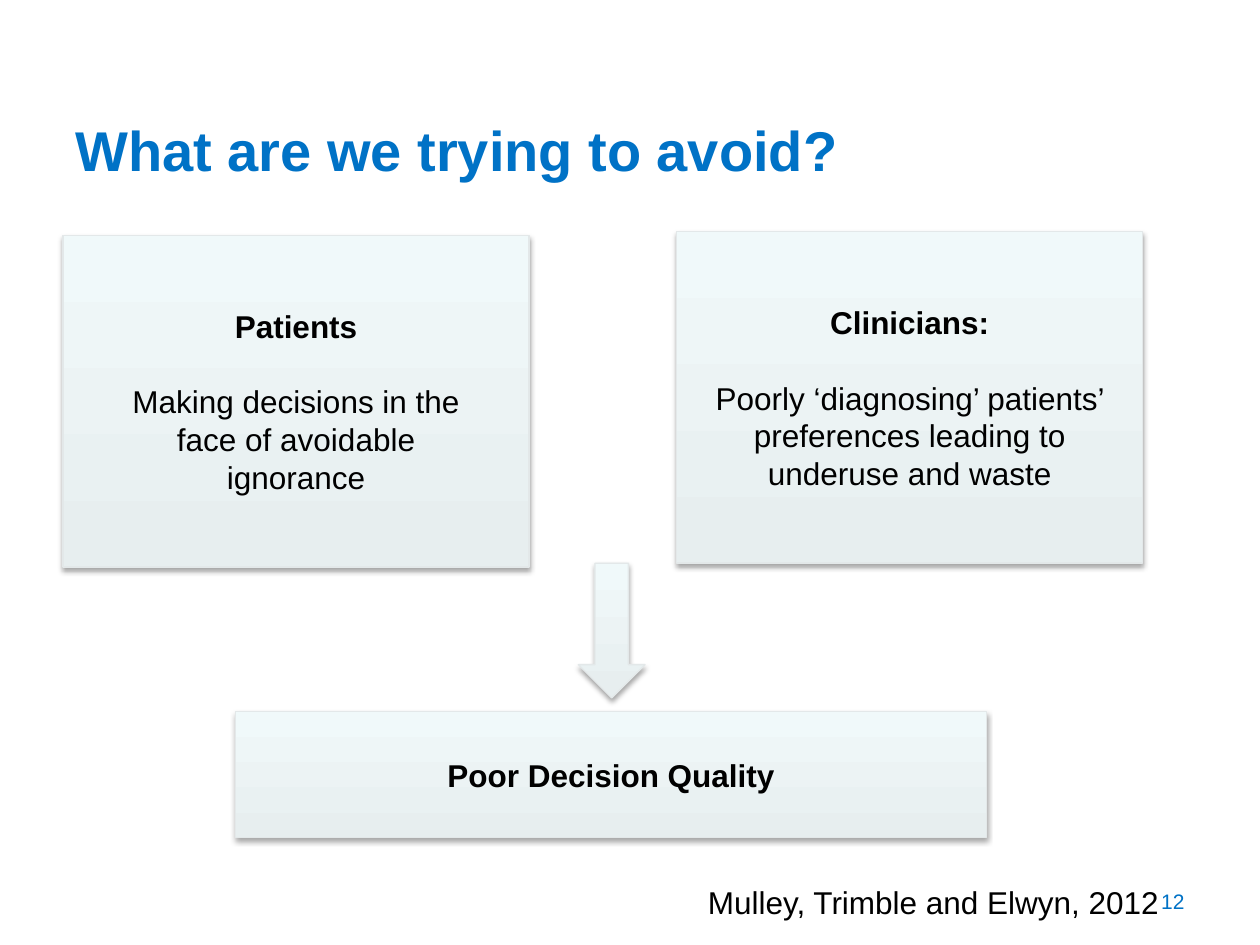
from dataclasses import dataclass

from lxml import etree
from pptx import Presentation
from pptx.dml.color import RGBColor
from pptx.enum import shapes, text
from pptx.oxml import ns
from pptx.util import Inches, Pt

BLUE = RGBColor(0x00, 0x72, 0xC6)
BLACK = RGBColor(0x00, 0x00, 0x00)
BORDER = RGBColor(0xE3, 0xE8, 0xE9)
GRADIENT = (RGBColor(0xE7, 0xEE, 0xEF), RGBColor(0xF0, 0xF9, 0xFA))
BODY_SIZE = 18
HEADING_GAP = Pt(21.6)

RECT = shapes.MSO_SHAPE.RECTANGLE
ARROW = shapes.MSO_SHAPE.DOWN_ARROW
ALIGN = text.PP_ALIGN
ANCHOR = text.MSO_ANCHOR


@dataclass(frozen=True)
class Panel:
    left: float
    top: float
    width: float
    height: float
    heading: str = ""
    lines: tuple[str, ...] = ()
    preset: shapes.MSO_SHAPE = RECT


@dataclass(frozen=True)
class Label:
    left: float
    top: float
    width: float
    height: float
    words: str
    font: dict
    align: text.PP_ALIGN = ALIGN.LEFT
    anchor: text.MSO_ANCHOR = ANCHOR.MIDDLE
    wrap: bool = True


PANELS = (
    Panel(0.5, 1.87, 3.7, 2.63, "Patients",
          ("Making decisions in the", "face of avoidable", "ignorance")),
    Panel(5.37, 1.84, 3.7, 2.63, "Clinicians:",
          ("Poorly ‘diagnosing’ patients’ preferences leading to underuse and waste",)),
    Panel(1.87, 5.65, 5.96, 1, "Poor Decision Quality"),
    Panel(4.59, 4.47, 0.53, 1.07, preset=ARROW),
)

LABELS = (
    Label(7.17, 6.95, 2.33, 0.4, "12", {"size": Pt(12)}, ALIGN.RIGHT),
    Label(0.5, 0.82, 8.05, 0.73, "What are we trying to avoid?",
          {"size": Pt(32), "bold": True}),
    Label(5.52, 6.96, 3.82, 0.4, "Mulley, Trimble and Elwyn, 2012",
          {"size": Pt(BODY_SIZE)}, anchor=ANCHOR.TOP, wrap=False),
)


def add_run(p, words: str, color: RGBColor, **font) -> None:
    r = p.add_run()
    r.text = words
    r.font.color.rgb = color
    for name, value in {"name": "Arial", **font}.items():
        setattr(r.font, name, value)


def add_soft_shadow(sp) -> None:
    """Give the shape a faint shadow that falls straight down."""
    sp.shadow.inherit = False
    effects = sp._element.spPr.find(ns.qn("a:effectLst"))
    shadow = etree.SubElement(
        effects, ns.qn("a:outerShdw"), blurRad=str(Pt(3.1)), dist=str(Pt(1.8)),
        dir="5400000", rotWithShape="0")
    color = etree.SubElement(shadow, ns.qn("a:srgbClr"), val="000000")
    etree.SubElement(color, ns.qn("a:alpha"), val="35000")


def draw_panel(s, panel: Panel) -> None:
    sp = s.shapes.add_shape(
        panel.preset, Inches(panel.left), Inches(panel.top),
        Inches(panel.width), Inches(panel.height))
    sp.fill.gradient()
    sp.fill.gradient_angle = 90
    for stop, color, position in zip(sp.fill.gradient_stops, GRADIENT, (0, 1)):
        stop.color.rgb = color
        stop.position = position
    sp.line.color.rgb = BORDER
    sp.line.width = Pt(0.75)
    add_soft_shadow(sp)
    if not panel.heading:
        return
    tf = sp.text_frame
    tf.word_wrap = True
    tf.vertical_anchor = ANCHOR.MIDDLE
    for i, words in enumerate((panel.heading, *panel.lines)):
        p = tf.add_paragraph() if i else tf.paragraphs[0]
        p.alignment = ALIGN.CENTER
        if i == 1:
            p.space_before = HEADING_GAP
        add_run(p, words, BLACK, size=Pt(BODY_SIZE), bold=i == 0)


def draw_label(s, label: Label, color: RGBColor) -> None:
    sp = s.shapes.add_textbox(
        Inches(label.left), Inches(label.top), Inches(label.width), Inches(label.height))
    tf = sp.text_frame
    tf.word_wrap = label.wrap
    tf.vertical_anchor = label.anchor
    p = tf.paragraphs[0]
    p.alignment = label.align
    add_run(p, label.words, color, **label.font)


def main() -> None:
    prs = Presentation()
    prs.slide_width, prs.slide_height = Inches(10), Inches(7.5)
    s = prs.slides.add_slide(prs.slide_layouts[6])
    page_number, title, citation = LABELS
    draw_label(s, page_number, BLUE)
    draw_label(s, title, BLUE)
    for panel in PANELS:
        draw_panel(s, panel)
    draw_label(s, citation, BLACK)
    prs.save("out.pptx")


if __name__ == "__main__":
    main()
